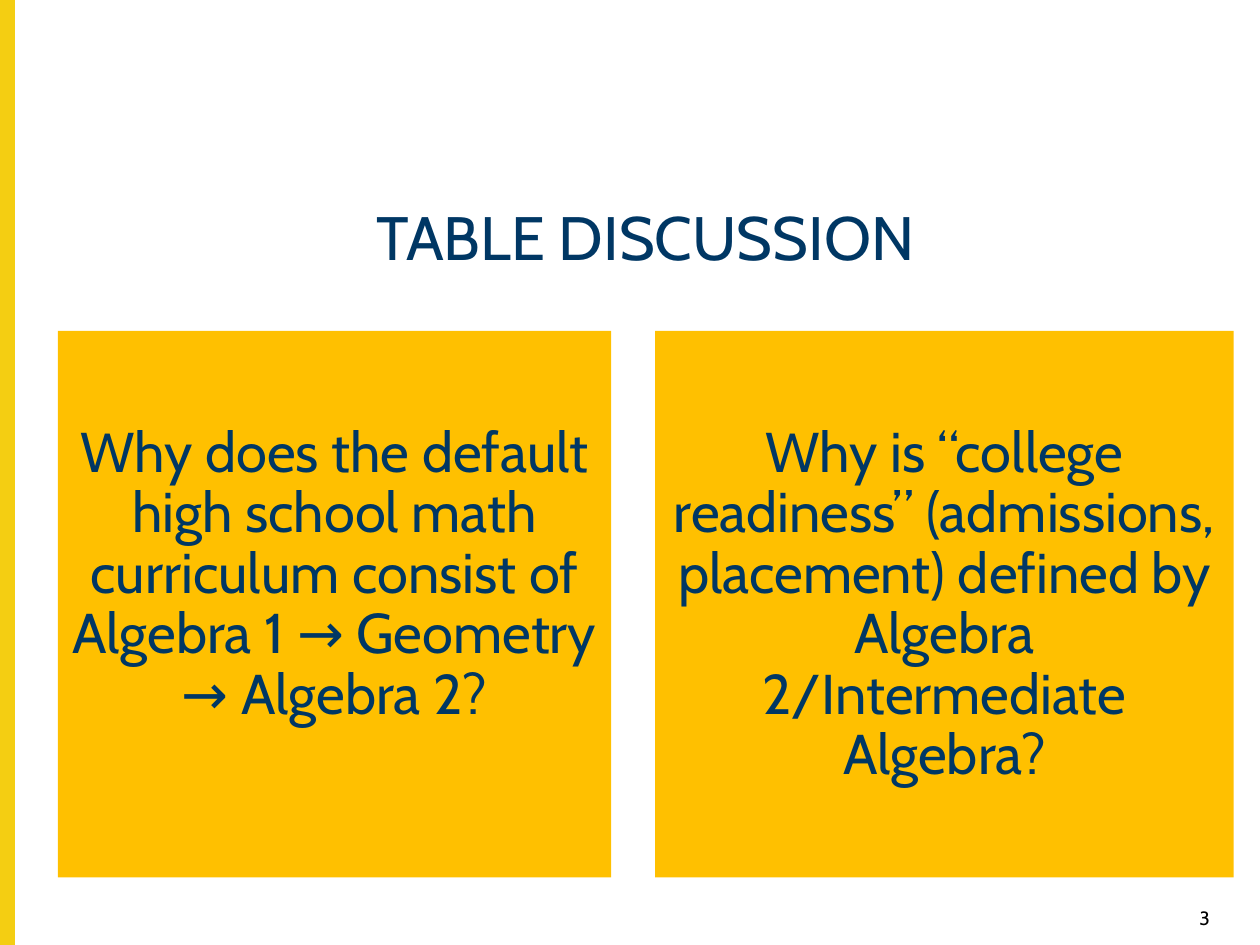
import pptx
import pptx.util
import pptx.dml.color
import pptx.enum.shapes
import pptx.enum.text
from dataclasses import dataclass

Cm = pptx.util.Cm
Pt = pptx.util.Pt
ALIGN = pptx.enum.text.PP_ALIGN


@dataclass(frozen=True)
class Theme:
    font: str = "Cabin"
    navy: str = "003764"
    black: str = "000000"
    accent: str = "F4CE12"
    panel: str = "FFC000"
    title_size: int = 35
    question_size: int = 32
    number_size: int = 11


class SlideBuilder:
    def __init__(self, slide, theme):
        self.slide = slide
        self.theme = theme

    def rectangle(self, left, top, width, height, color, outline=0):
        shape = self.slide.shapes.add_shape(
            pptx.enum.shapes.MSO_SHAPE.RECTANGLE,
            Cm(left), Cm(top), Cm(width), Cm(height))
        shape.shadow.inherit = False
        rgb = pptx.dml.color.RGBColor.from_string(color)
        shape.fill.solid()
        shape.fill.fore_color.rgb = rgb
        if outline:
            shape.line.color.rgb = rgb
            shape.line.width = Pt(outline)
        else:
            shape.line.fill.background()
        return shape

    def set_text(self, shape, text, size, color, align, spacing=0.9, inset_top=0.13):
        frame = shape.text_frame
        frame.word_wrap = True
        frame.vertical_anchor = pptx.enum.text.MSO_ANCHOR.TOP
        frame.margin_top = Cm(inset_top)
        paragraph = frame.paragraphs[0]
        paragraph.alignment = align
        paragraph.line_spacing = spacing
        run = paragraph.add_run()
        run.text = text
        run.font.name = self.theme.font
        run.font.size = Pt(size)
        run.font.color.rgb = pptx.dml.color.RGBColor.from_string(color)

    def label(self, left, top, width, height, text, size, color, align, spacing=0.9):
        box = self.slide.shapes.add_textbox(Cm(left), Cm(top), Cm(width), Cm(height))
        self.set_text(box, text, size, color, align, spacing)

    def question(self, left, width, text):
        panel = self.rectangle(left, 6.67, width, 11.02, self.theme.panel)
        self.set_text(panel, text, self.theme.question_size, self.theme.navy,
                      ALIGN.CENTER, inset_top=1.87)


def main():
    deck = pptx.Presentation()
    deck.slide_width, deck.slide_height = Cm(25.4), Cm(19.05)
    theme = Theme()
    builder = SlideBuilder(deck.slides.add_slide(deck.slide_layouts[6]), theme)

    # Accent bar on the left edge
    builder.rectangle(0, 0, 0.28, 19.05, theme.accent, outline=1)

    # Title
    builder.label(1.17, 4.06, 23.7, 2.01, "TABLE DISCUSSION",
                  theme.title_size, theme.navy, ALIGN.CENTER)

    # Discussion questions
    builder.question(1.17, 11.15, "Why does the default high school math curriculum "
                     "consist of Algebra 1 → Geometry → Algebra 2?")
    builder.question(13.21, 11.66, "Why is “college readiness” (admissions, placement) "
                     "defined by Algebra 2/Intermediate Algebra?")

    # Slide number
    builder.label(23.37, 18.14, 1.27, 0.53, "3", theme.number_size, theme.black,
                  ALIGN.RIGHT, spacing=1.0)

    deck.save("out.pptx")


if __name__ == "__main__":
    main()
